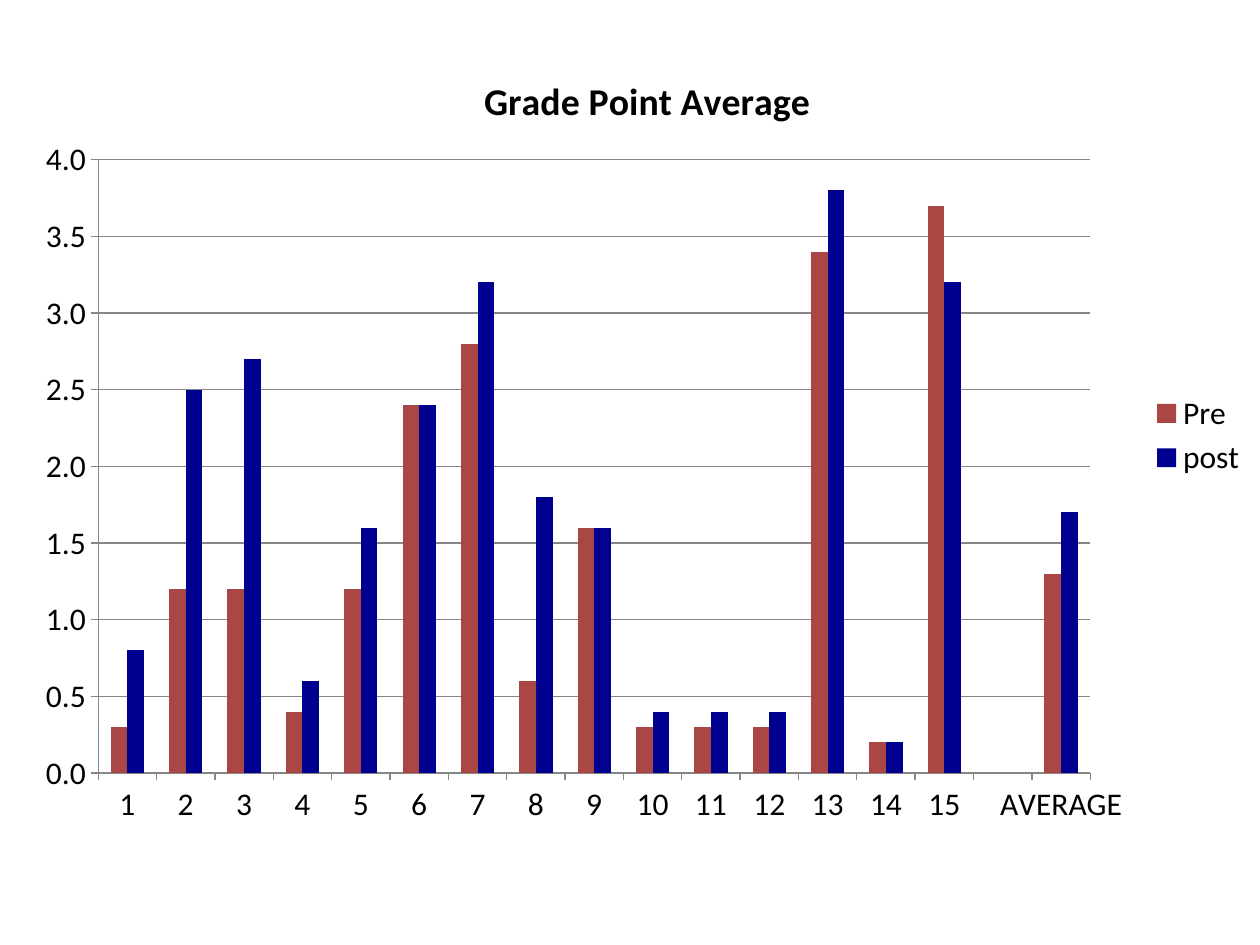
from lxml.etree import SubElement
from pptx import Presentation
from pptx.chart.data import CategoryChartData
from pptx.dml.color import RGBColor
from pptx.enum.chart import XL_CHART_TYPE as ChartType
from pptx.enum.chart import XL_LEGEND_POSITION as LegendPosition
from pptx.enum.chart import XL_TICK_MARK as TickMark
from pptx.oxml import parse_xml
from pptx.oxml.ns import qn
from pptx.util import Inches, Pt

BLACK = RGBColor(0x00, 0x00, 0x00)
GREY = RGBColor(0x86, 0x86, 0x86)
RED = RGBColor(0xAA, 0x46, 0x43)
NAVY = RGBColor(0x00, 0x00, 0x90)

CHART_NS = "http://schemas.openxmlformats.org/drawingml/2006/chart"
STUDENTS = [str(number) for number in range(1, 16)]
GRADES = {
    "Pre": (RED, [0.3, 1.2, 1.2, 0.4, 1.2, 2.4, 2.8, 0.6, 1.6,
                  0.3, 0.3, 0.3, 3.4, 0.2, 3.7, None, 1.3]),
    "post": (NAVY, [0.8, 2.5, 2.7, 0.6, 1.6, 2.4, 3.2, 1.8, 1.6,
                    0.4, 0.4, 0.4, 3.8, 0.2, 3.2, None, 1.7]),
}


def set_layout(part, position, **values):
    """Place a chart part by shares of the chart's size."""
    for old in part.findall(qn("c:layout")):
        part.remove(old)
    layout = parse_xml(f'<c:layout xmlns:c="{CHART_NS}"/>')
    manual = SubElement(layout, qn("c:manualLayout"))
    for name, value in values.items():
        SubElement(manual, qn(f"c:{name}")).set("val", str(value))
    part.insert(position, layout)


class GradeSlide:
    font_name = "Calibri"
    text_size = Pt(18)
    title_size = Pt(21.6)

    def __init__(self, deck):
        self.width, self.height = deck.slide_width, deck.slide_height
        self.slide = deck.slides.add_slide(deck.slide_layouts[6])

    def style_font(self, font, size, bold=False):
        font.name, font.size, font.bold = self.font_name, size, bold
        font.color.rgb = BLACK

    def add_column_chart(self, title, categories, series, left, top, width, height):
        """Add a clustered column chart; lengths are shares of the slide."""
        data = CategoryChartData(number_format="0.0")
        data.categories = categories
        for name, (_, values) in series.items():
            data.add_series(name, values)
        chart = self.slide.shapes.add_chart(
            ChartType.COLUMN_CLUSTERED,
            int(left * self.width), int(top * self.height),
            int(width * self.width), int(height * self.height), data).chart
        self.style_font(chart.font, self.text_size)

        plot = chart.plots[0]
        plot.gap_width, plot.overlap = 150, 0
        plot.vary_by_categories = False
        for columns, (color, _) in zip(plot.series, series.values()):
            columns.format.fill.solid()
            columns.format.fill.fore_color.rgb = color
            columns.invert_if_negative = False

        self.style_axes(chart)
        self.add_title(chart, title)
        chart.has_legend = True
        chart.legend.position = LegendPosition.RIGHT
        chart.legend.include_in_layout = False
        self.style_font(chart.legend.font, self.text_size)
        set_layout(chart.element.find(".//" + qn("c:plotArea")), 0,
                   layoutTarget="inner", xMode="edge", yMode="edge",
                   x=0.062, y=0.159, w=0.801, h=0.758)

    def style_axes(self, chart):
        grades = chart.value_axis
        grades.minimum_scale, grades.maximum_scale, grades.major_unit = 0, 4, 0.5
        grades.has_major_gridlines = True
        grades.tick_labels.number_format = "0.0"
        grades.tick_labels.number_format_is_linked = False
        for axis in (chart.category_axis, grades):
            axis.major_tick_mark = TickMark.OUTSIDE
            self.style_font(axis.tick_labels.font, self.text_size)
        for part in (chart.category_axis, grades, grades.major_gridlines):
            part.format.line.color.rgb = GREY
            part.format.line.width = Pt(0.75)

    def add_title(self, chart, title):
        chart.has_title = True
        paragraph = chart.chart_title.text_frame.paragraphs[0]
        paragraph.text = title
        self.style_font(paragraph.font, self.title_size, bold=True)
        set_layout(chart.element.find(".//" + qn("c:title")), 1,
                   xMode="edge", yMode="edge", x=0.368, y=0.045)


def main():
    deck = Presentation()
    deck.slide_width, deck.slide_height = Inches(10), Inches(7.5)
    GradeSlide(deck).add_column_chart(
        "Grade Point Average", [*STUDENTS, "", "AVERAGE"], GRADES,
        left=0.017, top=0.033, width=0.983, height=0.856)
    deck.save("out.pptx")


if __name__ == "__main__":
    main()
